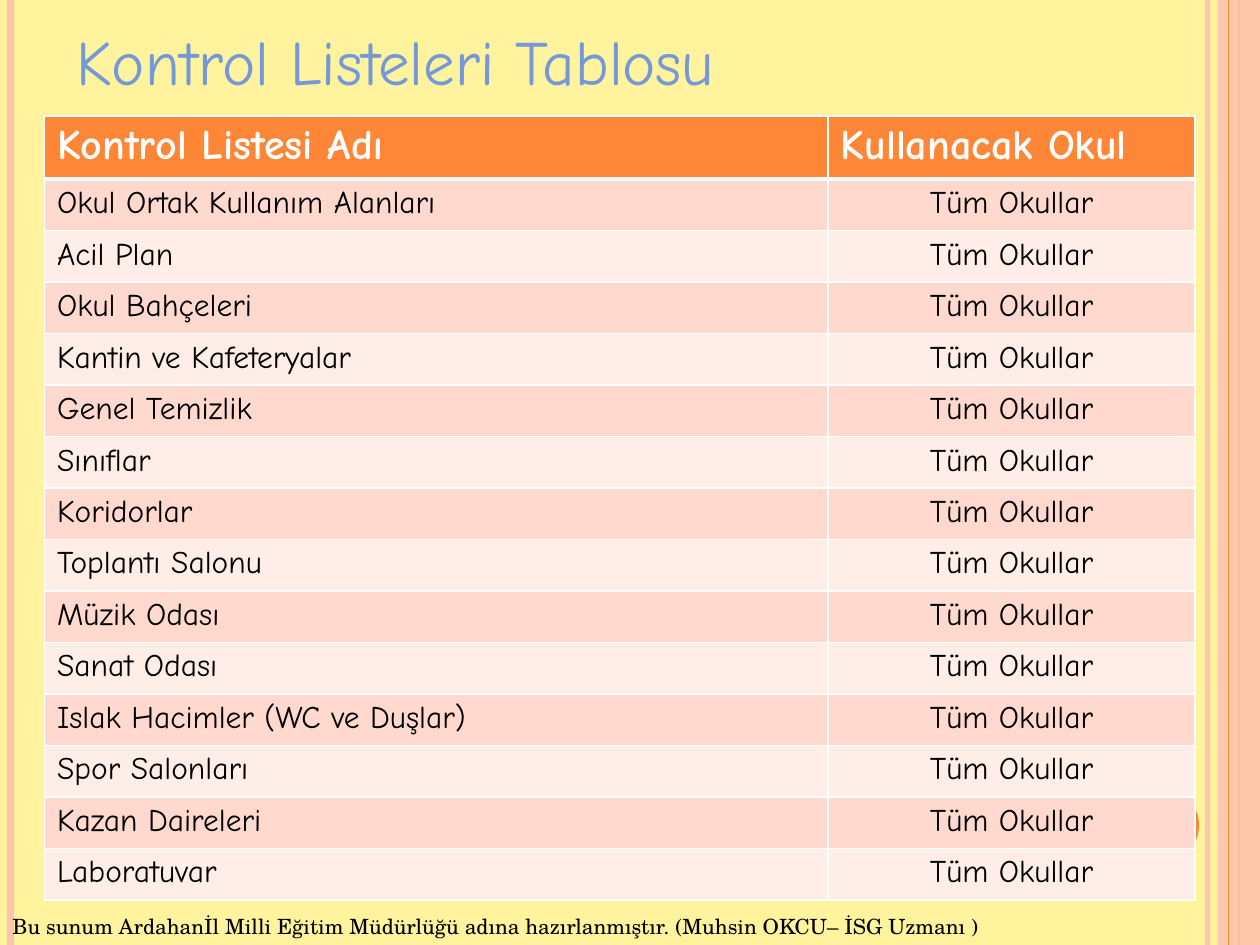
from lxml.etree import SubElement
from pptx import Presentation
from pptx.dml.color import RGBColor
from pptx.enum.shapes import MSO_CONNECTOR, MSO_SHAPE
from pptx.enum.text import PP_ALIGN
from pptx.oxml import parse_xml
from pptx.oxml.ns import nsdecls, qn
from pptx.util import Pt

COLORS = {
    "background": "FFF39D",
    "orange": "FE8637",
    "peach": "FEC3AE",
    "title": "7598D9",
    "dark_band": "FFD9CE",
    "light_band": "FFEDE8",
    "white": "FFFFFF",
    "black": "000000",
}
CHECKLISTS = [
    "Okul Ortak Kullanım Alanları",
    "Acil Plan",
    "Okul Bahçeleri",
    "Kantin ve Kafeteryalar",
    "Genel Temizlik",
    "Sınıflar",
    "Koridorlar",
    "Toplantı Salonu",
    "Müzik Odası",
    "Sanat Odası",
    "Islak Hacimler (WC ve Duşlar)",
    "Spor Salonları",
    "Kazan Daireleri",
    "Laboratuvar",
]


def rgb(name):
    return RGBColor.from_string(COLORS[name])


def write_text(frame, text, size=18, color="black", font="Comic Neue", bold=False, align=PP_ALIGN.LEFT):
    frame.word_wrap = True
    paragraph = frame.paragraphs[0]
    paragraph.alignment = align
    run = paragraph.add_run()
    run.text = text
    run.font.name = font
    run.font.size = Pt(size)
    run.font.bold = bold
    run.font.color.rgb = rgb(color)


prs = Presentation()
prs.slide_width, prs.slide_height = Pt(720), Pt(540)
slide = prs.slides.add_slide(prs.slide_layouts[6])
slide.background.fill.solid()
slide.background.fill.fore_color.rgb = rgb("background")
shapes = slide.shapes

stripes = []
for x, color, width in [(690, "peach", 3), (6, "peach", 4.5), (708, "orange", 1.5)]:
    stripe = shapes.add_connector(MSO_CONNECTOR.STRAIGHT, Pt(x), 0, Pt(x), Pt(540))
    stripe.line.color.rgb = rgb(color)
    stripe.line.width = Pt(width)
    stripes.append(stripe)

side_band = shapes.add_shape(MSO_SHAPE.RECTANGLE, Pt(696), 0, Pt(24), Pt(540))
inner_stripe = shapes.add_connector(MSO_CONNECTOR.STRAIGHT, Pt(702), 0, Pt(702), Pt(540))
inner_stripe.line.color.rgb = rgb("orange")
inner_stripe.line.width = Pt(0.75)
stripes.append(inner_stripe)
for stripe in stripes:
    SubElement(stripe._element.spPr, qn("a:effectLst"))

number_disc = shapes.add_shape(MSO_SHAPE.OVAL, Pt(642), Pt(450), Pt(43.2), Pt(43.2))
for ornament, color in [(side_band, "peach"), (number_disc, "orange")]:
    ornament.shadow.inherit = False
    ornament.fill.solid()
    ornament.fill.fore_color.rgb = rgb(color)
    ornament.line.fill.background()

for ornament, opacity in [(stripes[0], 93), (side_band, 87)]:
    tint = next(ornament._element.spPr.iter(qn("a:srgbClr")))
    SubElement(tint, qn("a:alpha"), val=str(opacity * 1000))

title = shapes.add_textbox(Pt(36.7), Pt(9.4), Pt(584), Pt(51))
write_text(title.text_frame, "Kontrol Listeleri Tablosu", size=36, color="title")

HEADER_HEIGHT, ROW_HEIGHT = 35.5, 29.45
rows = [("Kontrol Listesi Adı", "Kullanacak Okul")]
rows += [(checklist, "Tüm Okullar") for checklist in CHECKLISTS]
table_height = HEADER_HEIGHT + ROW_HEIGHT * len(CHECKLISTS)
table = shapes.add_table(len(rows), 2, Pt(25.4), Pt(66.2), Pt(657.4), Pt(table_height)).table
for column, width in zip(table.columns, (447.9, 209.5)):
    column.width = Pt(width)

for row_index, texts in enumerate(rows):
    is_header = row_index == 0
    table.rows[row_index].height = Pt(HEADER_HEIGHT if is_header else ROW_HEIGHT)
    band = "orange" if is_header else "dark_band" if row_index % 2 else "light_band"
    for column_index, text in enumerate(texts):
        cell = table.cell(row_index, column_index)
        cell.fill.solid()
        cell.fill.fore_color.rgb = rgb(band)
        if is_header:
            write_text(cell.text_frame, text, size=24, color="white", bold=True)
        else:
            write_text(cell.text_frame, text, align=PP_ALIGN.CENTER if column_index else PP_ALIGN.LEFT)
        cell_properties = cell._tc.get_or_add_tcPr()
        for position, side in enumerate("LRTB"):
            heavy = (is_header and side == "B") or (row_index == 1 and side == "T")
            border = parse_xml(
                f'<a:ln{side} {nsdecls("a")} w="{Pt(3 if heavy else 1)}"><a:solidFill>'
                f'<a:srgbClr val="{COLORS["white"]}"/></a:solidFill></a:ln{side}>'
            )
            cell_properties.insert(position, border)

credit = shapes.add_textbox(0, Pt(518.4), Pt(572.4), Pt(21.6))
write_text(
    credit.text_frame,
    "Bu sunum Ardahanİl Milli Eğitim Müdürlüğü adına hazırlanmıştır. (Muhsin OKCU– İSG Uzmanı )",
    size=12,
    font="TeX Gyre Schola",
)

prs.save("out.pptx")
